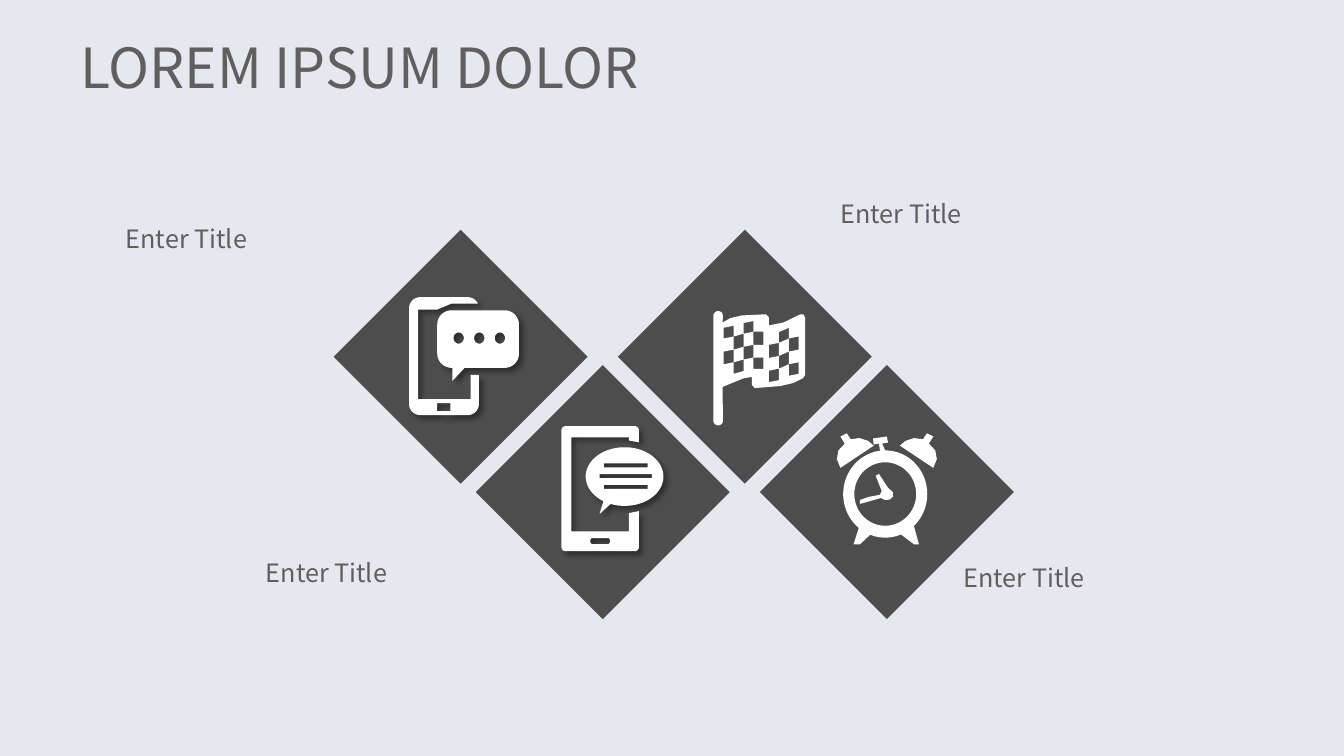
from math import cos, radians, sin

from lxml.etree import SubElement
from pptx import Presentation
from pptx.dml.color import RGBColor
from pptx.enum.shapes import MSO_SHAPE
from pptx.enum.text import MSO_ANCHOR, MSO_AUTO_SIZE, PP_ALIGN
from pptx.oxml.ns import qn
from pptx.util import Cm, Pt

COLORS = {"background": "E7E7EF", "diamond": "4D4D4D", "icon": "FFFFFF",
          "text": "5F5F5F", "shadow": "000000"}
FONT = "Noto Sans CJK JP"
LABELS = [(2.92, 5.36), (6.45, 13.77), (20.93, 4.72), (24.03, 13.89)]


def color(name):
    """Return the named colour."""
    return RGBColor.from_string(COLORS[name])


def arc(x, y, radius_x, radius_y, start, end):
    """Return points on an arc, with angles clockwise from the right."""
    steps = max(6, round((end - start) / 6))
    angles = [radians(start + (end - start) * i / steps) for i in range(steps + 1)]
    return [(x + radius_x * cos(a), y + radius_y * sin(a)) for a in angles]


def ellipse(x, y, radius_x, radius_y):
    """Return the outline of a whole ellipse."""
    return arc(x, y, radius_x, radius_y, 0, 360)


def box(left, top, width, height):
    """Return the corners of a rectangle."""
    right, bottom = left + width, top + height
    return [(left, top), (right, top), (right, bottom), (left, bottom)]


def rounded_corners(left, top, width, height, radius, last_angle=360):
    """Return corner arcs, from bottom right clockwise to top right."""
    x1, x2 = left + radius, left + width - radius
    y1, y2 = top + radius, top + height - radius
    centers = [(x2, y2, 0, 90), (x1, y2, 90, 180), (x1, y1, 180, 270),
               (x2, y1, 270, last_angle)]
    return [arc(x, y, radius, radius, start, end) for x, y, start, end in centers]


def rounded_box(left, top, width, height, radius):
    """Return the outline of a rounded rectangle."""
    return sum(rounded_corners(left, top, width, height, radius), [])


def chat_phone():
    """Return the outlines of a phone with a dotted speech bubble."""
    frame = sum(rounded_corners(10.31, 7.49, 1.76, 2.97, 0.28, 335), [])
    frame += [(12.04, 7.65), (11.38, 7.65), (11.02, 7.8), (10.54, 7.8),
              (10.54, 10.06), (11.86, 10.06), (11.86, 9.45), (12.07, 9.45)]
    corners = rounded_corners(11.02, 7.82, 2.06, 1.45, 0.36)
    tail = [(11.71, 9.27), (11.4, 9.6), (11.4, 9.27)]
    bubble = corners[0] + tail + sum(corners[1:], [])
    dots = [ellipse(11.56 + 0.52 * i, 8.52, 0.13, 0.14) for i in range(3)]
    return [frame, bubble, *dots, box(11.02, 10.16, 0.33, 0.2)]


def message_phone():
    """Return the outlines of a phone with a lined speech bubble."""
    frame = rounded_box(14.15, 10.74, 1.95, 3.15, 0.1)
    frame += [(16.1, 11.15), (15.85, 11.1), (15.85, 11.02), (14.4, 11.02),
              (14.4, 13.39), (15.85, 13.39), (15.85, 12.93), (16.1, 12.88)]
    bubble = arc(15.74, 12.01, 0.98, 0.74, 123, 471) + [(15.11, 12.95)]
    lines = [box(15.77 - width / 2, 11.68 + 0.27 * i, width, 0.1)
             for i, width in enumerate((1.1, 1.32, 1.1))]
    return [frame, bubble, *lines, rounded_box(14.88, 13.56, 0.49, 0.15, 0.05)]


def checks(left, step, crest, parity):
    """Return the alternate cells of a grid that follows the crest."""
    rows = (-0.27, 0, 0.33, 0.65, 0.94)
    cells = []
    for column in range(len(crest) - 1):
        x1, x2 = left + step * column, left + step * (column + 1)
        y1, y2 = crest[column:column + 2]
        cells += [[(x1, y1 + rows[row]), (x2, y2 + rows[row]),
                   (x2, y2 + rows[row + 1]), (x1, y1 + rows[row + 1])]
                  for row in range(4) if (row + column) % 2 == parity]
    return cells


def flag():
    """Return the outlines of a chequered flag."""
    cloth = [(18.21, 8.13), (18.4, 8.02), (18.69, 7.95), (19.3, 7.92), (19.38, 8),
             (19.38, 8.2), (19.74, 8.13), (20.17, 7.92), (20.25, 7.92), (20.29, 8),
             (20.29, 9.45), (20.24, 9.53), (20, 9.65), (19.66, 9.73), (19.02, 9.78),
             (18.95, 9.7), (18.95, 9.5), (18.75, 9.53), (18.21, 9.75)]
    outline = (arc(18.1, 7.96, 0.12, 0.12, 180, 360) + cloth
               + arc(18.1, 10.6, 0.12, 0.12, 0, 180))
    return [outline, *checks(18.24, 0.25, (8.53, 8.48, 8.41, 8.36, 8.36), 0),
            *checks(19.38, 0.25, (8.69, 8.64, 8.53, 8.48), 1)]


def alarm_clock():
    """Return the outlines of an alarm clock."""
    x, y = 22.31, 12.45
    stem = [(22.15, 11.18), (22.02, 11.2), (22, 11.05), (22.35, 11),
            (22.38, 11.15), (22.23, 11.18)]
    body = (arc(x, y, 1.06, 1.1, 129, 263) + stem
            + arc(x, y, 1.06, 1.1, 270, 407) + [(23.16, 13.72), (23.04, 13.72)]
            + arc(x, y, 1.06, 1.1, 68, 111) + [(21.67, 13.72), (21.51, 13.72)])
    bell = [(21.44, 11.07), (21.34, 10.92), (21.18, 11), (21.29, 11.18),
            (21.13, 11.35), (21.09, 11.57), (21.18, 11.79), (22.02, 11.23),
            (21.88, 11.11), (21.66, 11.04)]
    hands = [(22.2, 12.42), (22.17, 12.47), (21.9, 12.52), (21.67, 12.6), (21.67, 12.7),
             (22.2, 12.55), (22.3, 12.6), (22.42, 12.59), (22.5, 12.52), (22.5, 12.4),
             (22.38, 12.29), (22.15, 11.94), (22.07, 11.99), (22.22, 12.37)]
    mirrored_bell = [(44.7 - bell_x, bell_y) for bell_x, bell_y in bell]
    return [body, ellipse(x, y, 0.78, 0.8), bell, mirrored_bell, hands]


def paint(shape, name):
    """Give a shape a plain fill with no line or shadow."""
    shape.shadow.inherit = False
    shape.fill.solid()
    shape.fill.fore_color.rgb = color(name)
    shape.line.fill.background()


def add_shadow(shape):
    """Give a shape a soft shadow to the lower right."""
    effects = shape._element.spPr.find(qn("a:effectLst"))
    shadow = SubElement(effects, qn("a:outerShdw"), blurRad=str(Pt(4)), dist=str(Pt(4)),
                        dir="2700000", algn="tl", rotWithShape="0")
    shade = SubElement(shadow, qn("a:srgbClr"), val=COLORS["shadow"])
    SubElement(shade, qn("a:alpha"), val="40000")


def add_diamond(slide, left, top):
    """Add a dark diamond."""
    size = Cm(6.4)
    shape = slide.shapes.add_shape(MSO_SHAPE.DIAMOND, Cm(left), Cm(top), size, size)
    paint(shape, "diamond")


def add_icon(slide, outlines, shadowed=False):
    """Add a white icon whose inner outlines are holes."""
    contours = [[(Cm(x), Cm(y)) for x, y in outline] for outline in outlines]
    builder = slide.shapes.build_freeform(*contours[0][0], scale=1.0)
    builder.add_line_segments(contours[0][1:], close=True)
    for contour in contours[1:]:
        builder.move_to(*contour[0])
        builder.add_line_segments(contour[1:], close=True)
    shape = builder.convert_to_shape()
    paint(shape, "icon")
    if shadowed:
        add_shadow(shape)


def write(text_frame, text, size, spacing):
    """Write one left-aligned line of grey text."""
    text_frame.text = text
    text_frame.word_wrap = True
    text_frame.auto_size = MSO_AUTO_SIZE.NONE
    paragraph = text_frame.paragraphs[0]
    paragraph.alignment = PP_ALIGN.LEFT
    paragraph.line_spacing = spacing
    font = paragraph.runs[0].font
    font.name, font.size, font.color.rgb = FONT, Pt(size), color("text")


def add_title(slide, text):
    """Place and format the slide title."""
    title = slide.shapes.title
    title.left, title.top, title.width, title.height = Cm(1.7), Cm(0.76), Cm(30.48), Cm(1.83)
    text_frame = title.text_frame
    text_frame.margin_left = text_frame.margin_right = Cm(0.33)
    text_frame.margin_top = text_frame.margin_bottom = Cm(0.18)
    text_frame.vertical_anchor = MSO_ANCHOR.MIDDLE
    write(text_frame, text, 39.5, 1.0)


def main():
    """Build the slide and save it."""
    presentation = Presentation()
    presentation.slide_width, presentation.slide_height = Cm(33.87), Cm(19.05)
    slide = presentation.slides.add_slide(presentation.slide_layouts[5])
    slide.background.fill.solid()
    slide.background.fill.fore_color.rgb = color("background")
    add_title(slide, "LOREM IPSUM DOLOR")
    for i in range(4):
        add_diamond(slide, 8.41 + 3.58 * i, 5.79 + 3.41 * (i % 2))
    add_icon(slide, chat_phone(), shadowed=True)
    add_icon(slide, message_phone(), shadowed=True)
    add_icon(slide, flag())
    add_icon(slide, alarm_clock())
    for left, top in LABELS:
        label = slide.shapes.add_textbox(Cm(left), Cm(top), Cm(7.04), Cm(2.74))
        write(label.text_frame, "Enter Title", 18, 1.2)
    presentation.save("out.pptx")


if __name__ == "__main__":
    main()
